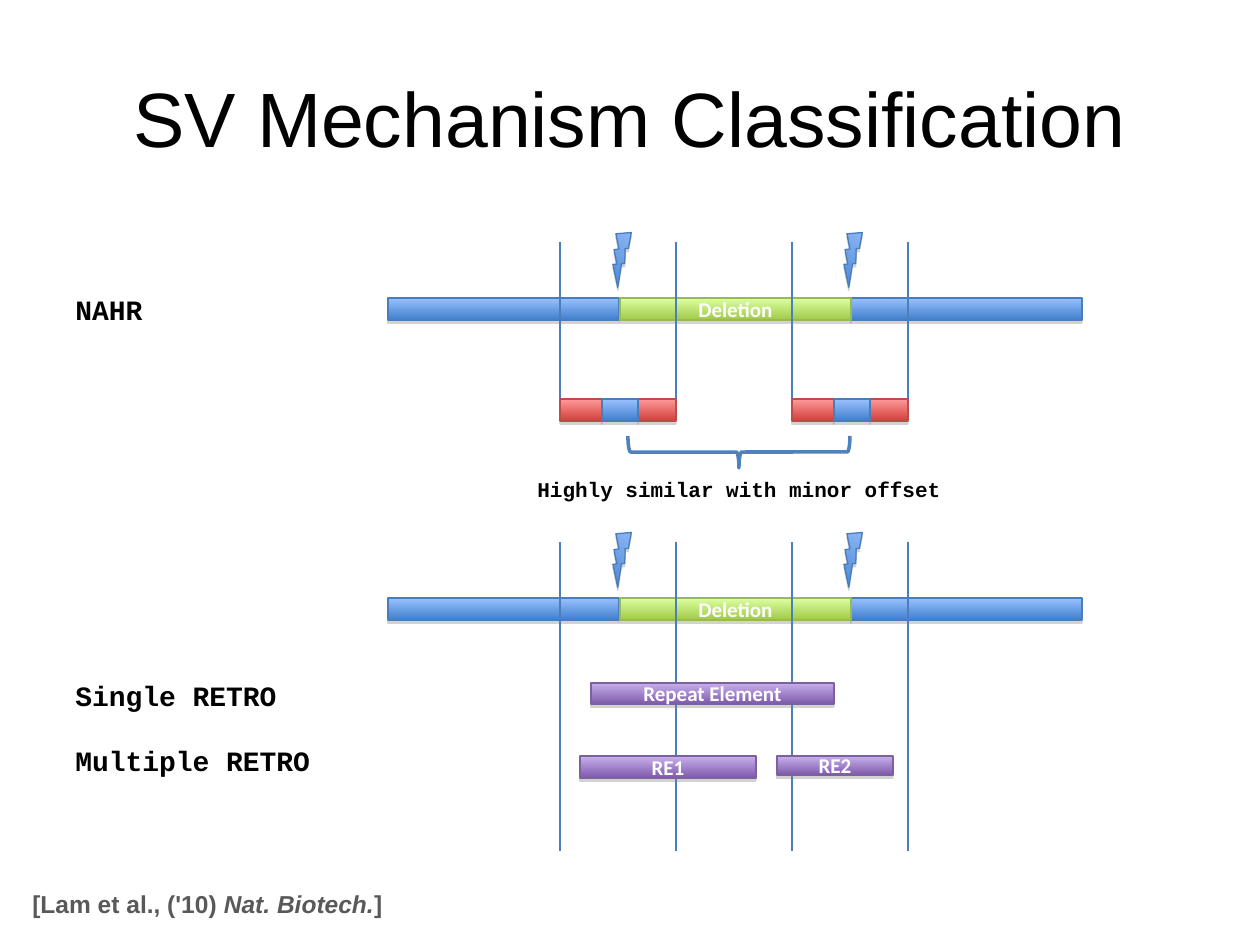
from lxml.etree import SubElement
from pptx import Presentation
from pptx.dml.color import RGBColor
from pptx.enum.shapes import MSO_CONNECTOR, MSO_SHAPE
from pptx.enum.text import MSO_ANCHOR, PP_ALIGN
from pptx.oxml.ns import qn
from pptx.util import Pt

SCALE = 914400 // 126

# top colour, bottom colour, outline
BLUE = ("9BC1FF", "3F80CD", "4A7EBB")
GREEN = ("DCFFA0", "A0CA4A", "98B954")
RED = ("FF9A99", "D1403C", "BE4B48")
PURPLE = ("C8B0ED", "7F5BAB", "7D60A0")


def px(*values):
    return [round(v * SCALE) for v in values]


def color(code):
    return RGBColor.from_string(code)


class Board:
    mono = "Courier New"
    sans = "Arial"
    bar_font = "Calibri"

    def __init__(self, slide):
        self.slide = slide
        self.shapes = slide.shapes

    def font(self, para, name, size, code, bold=True):
        para.font.name = name
        para.font.size = Pt(size)
        para.font.bold = bold
        para.font.color.rgb = color(code)

    def title(self, text, x, y, w, h):
        box = self.shapes.title
        box.left, box.top, box.width, box.height = px(x, y, w, h)
        box.text_frame.text = text
        box.text_frame.vertical_anchor = MSO_ANCHOR.MIDDLE
        para = box.text_frame.paragraphs[0]
        para.alignment = PP_ALIGN.CENTER
        self.font(para, self.sans, 44, "000000", False)

    def label(self, runs, x, y, w, h, size, name=mono, code="000000"):
        """Runs are (text, italic) pairs."""
        box = self.shapes.add_textbox(*px(x, y, w, h))
        box.text_frame.word_wrap = False
        para = box.text_frame.paragraphs[0]
        for text, italic in runs:
            run = para.add_run()
            run.text = text
            if italic:
                run.font.italic = True
        self.font(para, name, size, code)

    def shadow(self, shape):
        shape.shadow.inherit = False
        effects = shape._element.spPr.find(qn("a:effectLst"))
        outer = SubElement(effects, qn("a:outerShdw"), blurRad="0", dist="23000",
                           dir="5400000", rotWithShape="0")
        tint = SubElement(outer, qn("a:srgbClr"), val="808080")
        SubElement(tint, qn("a:alpha"), val="35000")

    def block(self, x, y, w, h, tones, text="", kind=MSO_SHAPE.RECTANGLE, turn=0):
        shape = self.shapes.add_shape(kind, *px(x, y, w, h))
        shape.rotation = turn
        shape.fill.gradient()
        shape.fill.gradient_angle = 270
        for stop, tone in zip(shape.fill.gradient_stops, tones):
            stop.color.rgb = color(tone)
        shape.line.color.rgb = color(tones[2])
        shape.line.width = Pt(0.75)
        self.shadow(shape)
        if text:
            frame = shape.text_frame
            frame.text = text
            frame.vertical_anchor = MSO_ANCHOR.MIDDLE
            para = frame.paragraphs[0]
            para.alignment = PP_ALIGN.CENTER
            self.font(para, self.bar_font, 12, "FFFFFF")

    def guide(self, x, top, end):
        line = self.shapes.add_connector(MSO_CONNECTOR.STRAIGHT, *px(x, top, x, end))
        line.line.color.rgb = color("4B7EBC")
        line.line.width = Pt(0.75)
        SubElement(line._element.spPr, qn("a:effectLst"))

    def brace(self, x, y, w, h):
        shape = self.shapes.add_shape(MSO_SHAPE.LEFT_BRACE, *px(x, y, w, h))
        shape.rotation = 270
        shape.shadow.inherit = False
        shape.fill.solid()
        shape.fill.fore_color.rgb = color("FFFFFF")
        shape.line.color.rgb = color("4F81BD")
        shape.line.width = Pt(2)

    def strand(self, y, end):
        """Genome strand with its deletion, break points and guides."""
        for x, tones, text in ((388, BLUE, ""), (851, BLUE, ""),
                               (620, GREEN, "Deletion")):
            self.block(x, y, 231, 22, tones, text)
        for x in (560, 676, 792, 908):
            self.guide(x, y - 56, end)
        for x in (604, 835):
            self.block(x, y - 68, 31, 53, BLUE, "", MSO_SHAPE.LIGHTNING_BOLT, 33.5)


def main():
    deck = Presentation()
    deck.slide_width, deck.slide_height = px(1260, 945)
    board = Board(deck.slides.add_slide(deck.slide_layouts[5]))
    board.title("SV Mechanism Classification", 63, 38, 1134, 157)

    # NAHR: strand above two similar segments
    board.strand(298, 420)
    for x in (560, 792):
        for shift, w, tones in ((0, 42, RED), (78, 38, RED), (42, 36, BLUE)):
            board.block(x + shift, 399, w, 22, tones)
    board.label([("Highly similar with minor offset", False)], 525, 470, 431, 38, 12)
    board.brace(723, 341, 32, 222)

    # RETRO: strand above repeat elements
    board.strand(598, 851)
    for text, x, y, w, h in (("Repeat Element", 591, 683, 243, 21),
                             ("RE1", 580, 756, 176, 22),
                             ("RE2", 777, 756, 116, 19)):
        board.block(x, y, w, h, PURPLE, text)

    # Row names
    for text, y, w in (("NAHR", 286, 93), ("Single RETRO", 672, 229),
                       ("Multiple RETRO", 737, 263)):
        board.label([(text, False)], 63, y, w, 47, 16)

    # Citation
    board.label([("[Lam et al., ('10) ", False), ("Nat. Biotech.", True), ("]", False)],
                20, 883, 378, 43, 14, board.sans, "595959")

    deck.save("out.pptx")


if __name__ == "__main__":
    main()
